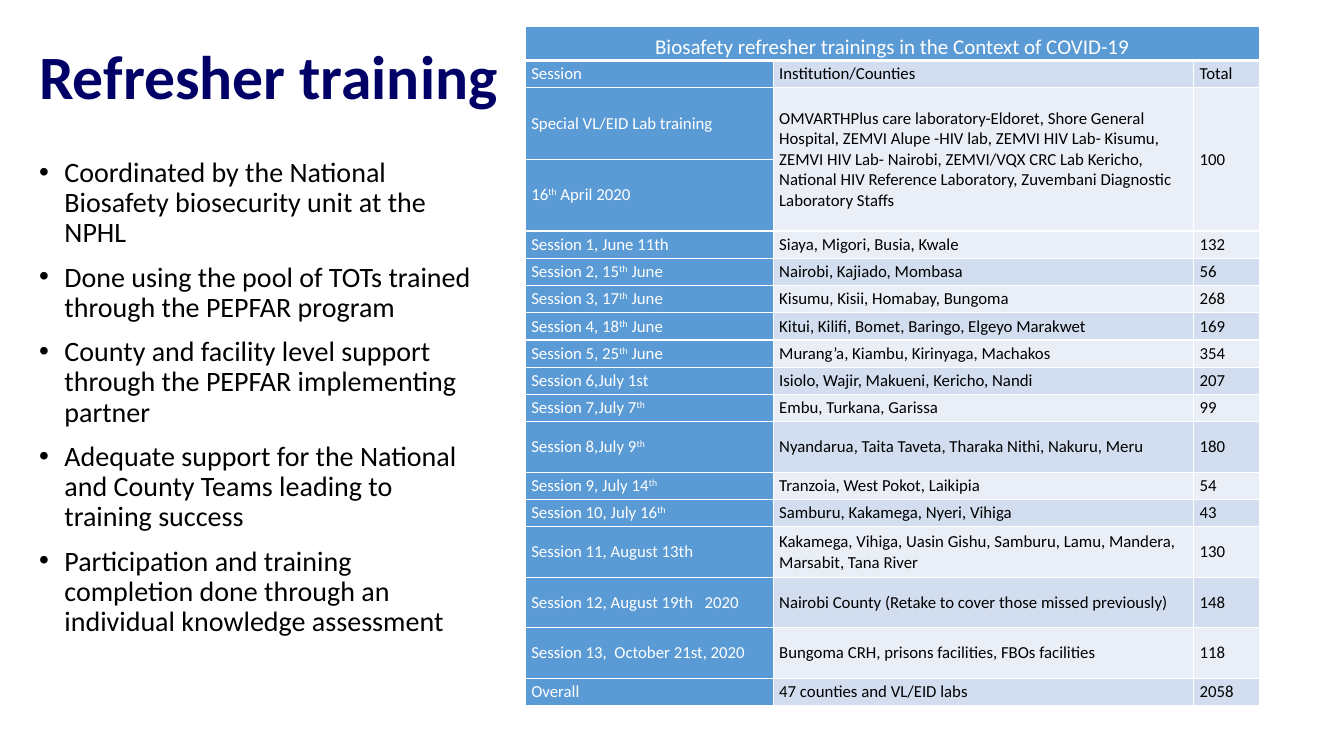
from lxml import etree
from pptx import Presentation
from pptx import util as u
from pptx.dml.color import RGBColor
from pptx.enum import text as t
from pptx.oxml import ns

WIDTH, HEIGHT = u.Inches(13.33), u.Inches(7.5)
LEFT, TOP = 2.18, 3.47
WHITE, BLACK, NAVY, BLUE = "FFFFFF", "000000", "000066", "5B9BD5"
BANDS = ["EAEFF7", "D2DEEF"]
COLUMN_SHARES = [18.45, 31.28, 4.88]
HEADING_ROW, LINE_ROW, TALL_ROW, MERGED_ROW = 4.53, 3.61, 6.68, 9.48

BULLETS = [
    "Coordinated by the National Biosafety biosecurity unit at the NPHL",
    "Done using the pool of TOTs trained through the PEPFAR program",
    "County and facility level support through the PEPFAR implementing partner",
    "Adequate support for the National and County Teams leading to training success",
    "Participation and training completion done through an individual knowledge assessment",
]
LABS = (
    "OMVARTHPlus care laboratory-Eldoret, Shore General Hospital, ZEMVI Alupe -HIV lab, "
    "ZEMVI HIV Lab- Kisumu, ZEMVI HIV Lab- Nairobi, ZEMVI/VQX CRC Lab Kericho, "
    "National HIV Reference Laboratory, Zuvembani Diagnostic Laboratory Staffs"
)
TRAININGS = [
    (HEADING_ROW, "Biosafety refresher trainings in the Context of COVID-19"),
    (LINE_ROW, "Session", "Institution/Counties", "Total"),
    (MERGED_ROW, "Special VL/EID Lab training", LABS, "100"),
    (MERGED_ROW, "16^th^ April 2020"),
    (LINE_ROW, "Session 1, June 11th", "Siaya, Migori, Busia, Kwale", "132"),
    (LINE_ROW, "Session 2, 15^th^ June", "Nairobi, Kajiado, Mombasa", "56"),
    (LINE_ROW, "Session 3, 17^th^ June", "Kisumu, Kisii, Homabay, Bungoma", "268"),
    (LINE_ROW, "Session 4, 18^th^ June", "Kitui, Kilifi, Bomet, Baringo, Elgeyo Marakwet", "169"),
    (LINE_ROW, "Session 5, 25^th^ June", "Murang’a, Kiambu, Kirinyaga, Machakos", "354"),
    (LINE_ROW, "Session 6,July 1st", "Isiolo, Wajir, Makueni, Kericho, Nandi", "207"),
    (LINE_ROW, "Session 7,July 7^th", "Embu, Turkana, Garissa", "99"),
    (TALL_ROW, "Session 8,July 9^th", "Nyandarua, Taita Taveta, Tharaka Nithi, Nakuru, Meru", "180"),
    (LINE_ROW, "Session 9, July 14^th", "Tranzoia, West Pokot, Laikipia", "54"),
    (LINE_ROW, "Session 10, July 16^th", "Samburu, Kakamega, Nyeri, Vihiga", "43"),
    (TALL_ROW, "Session 11, August 13th",
     "Kakamega, Vihiga, Uasin Gishu, Samburu, Lamu, Mandera, Marsabit, Tana River", "130"),
    (TALL_ROW, "Session 12, August 19th   2020",
     "Nairobi County (Retake to cover those missed previously)", "148"),
    (TALL_ROW, "Session 13,  October 21st, 2020",
     "Bungoma CRH, prisons facilities, FBOs facilities", "118"),
    (LINE_ROW, "Overall", "47 counties and VL/EID labs", "2058"),
]


def across(percent):
    return round(WIDTH * percent / 100)


def down(percent):
    return round(HEIGHT * percent / 100)


def color(value):
    return RGBColor.from_string(value)


def write(paragraph, content, size=12, fill=BLACK, bold=False, align=t.PP_ALIGN.LEFT,
          spacing=None, before=None):
    paragraph.alignment = align
    paragraph.line_spacing = spacing
    paragraph.space_before = before
    for index, part in enumerate(content.split("^")):
        run = paragraph.add_run()
        run.text = part
        run.font.name = "Calibri"
        run.font.size = u.Pt(size)
        run.font.bold = bold
        run.font.color.rgb = color(fill)
        if index % 2:
            run._r.get_or_add_rPr().set("baseline", "30000")


def add_bullet(paragraph):
    properties = paragraph._p.get_or_add_pPr()
    indent = u.Inches(0.25)
    properties.set("marL", str(indent))
    properties.set("indent", str(-indent))
    etree.SubElement(properties, ns.qn("a:buFont")).set("typeface", "Arial")
    etree.SubElement(properties, ns.qn("a:buChar")).set("char", "•")


def add_text_frame(slide, left, top, width, height, anchor):
    box = slide.shapes.add_textbox(across(left), down(top), across(width), down(height))
    frame = box.text_frame
    frame.word_wrap = True
    frame.vertical_anchor = anchor
    return frame


def add_title(slide):
    frame = add_text_frame(slide, LEFT, TOP, 37.66, 14.13, t.MSO_ANCHOR.MIDDLE)
    write(frame.paragraphs[0], "Refresher training", size=44, fill=NAVY, bold=True, spacing=0.9)


def add_bullets(slide):
    frame = add_text_frame(slide, LEFT, 20.27, 34.66, 70.53, t.MSO_ANCHOR.TOP)
    for index, content in enumerate(BULLETS):
        paragraph = frame.add_paragraph() if index else frame.paragraphs[0]
        write(paragraph, content, size=20, spacing=0.9, before=u.Pt(10))
        add_bullet(paragraph)


def set_borders(cell, bottom):
    properties = cell._tc.get_or_add_tcPr()
    sides = {"lnL": 1, "lnR": 1, "lnT": 1, "lnB": bottom}
    for position, (side, width) in enumerate(sides.items()):
        line = etree.Element(ns.qn(f"a:{side}"), w=str(u.Pt(width)))
        fill = etree.SubElement(line, ns.qn("a:solidFill"))
        etree.SubElement(fill, ns.qn("a:srgbClr")).set("val", WHITE)
        properties.insert(position, line)


def style_cell(cell, fill, anchor, bottom=1):
    cell.fill.solid()
    cell.fill.fore_color.rgb = color(fill)
    cell.vertical_anchor = anchor
    cell.margin_left = cell.margin_right = u.Inches(0.06)
    cell.margin_top = cell.margin_bottom = 0
    set_borders(cell, bottom)


def add_trainings(slide):
    heights = [training[0] for training in TRAININGS]
    table = slide.shapes.add_table(
        len(TRAININGS), len(COLUMN_SHARES), across(39.08), down(TOP),
        across(sum(COLUMN_SHARES)), down(sum(heights))).table
    table.first_row = table.horz_banding = False
    for column, share in zip(table.columns, COLUMN_SHARES):
        column.width = across(share)
    for row, height in zip(table.rows, heights):
        row.height = down(height)

    for row, (_, *contents) in enumerate(TRAININGS):
        heading = row == 0
        for column in range(len(COLUMN_SHARES)):
            cell = table.cell(row, column)
            colored = heading or column == 0
            style_cell(cell, BLUE if colored else BANDS[row % 2],
                       t.MSO_ANCHOR.BOTTOM if heading else t.MSO_ANCHOR.MIDDLE,
                       bottom=3 if heading else 1)
            if column < len(contents):
                write(cell.text_frame.paragraphs[0], contents[column],
                      size=15 if heading else 12, fill=WHITE if colored else BLACK,
                      align=t.PP_ALIGN.CENTER if heading else t.PP_ALIGN.LEFT)

    table.cell(0, 0).merge(table.cell(0, 2))
    for column in (1, 2):
        table.cell(2, column).merge(table.cell(3, column))


def main():
    presentation = Presentation()
    presentation.slide_width, presentation.slide_height = WIDTH, HEIGHT
    slide = presentation.slides.add_slide(presentation.slide_layouts[6])
    add_title(slide)
    add_bullets(slide)
    add_trainings(slide)
    presentation.save("out.pptx")


if __name__ == "__main__":
    main()
